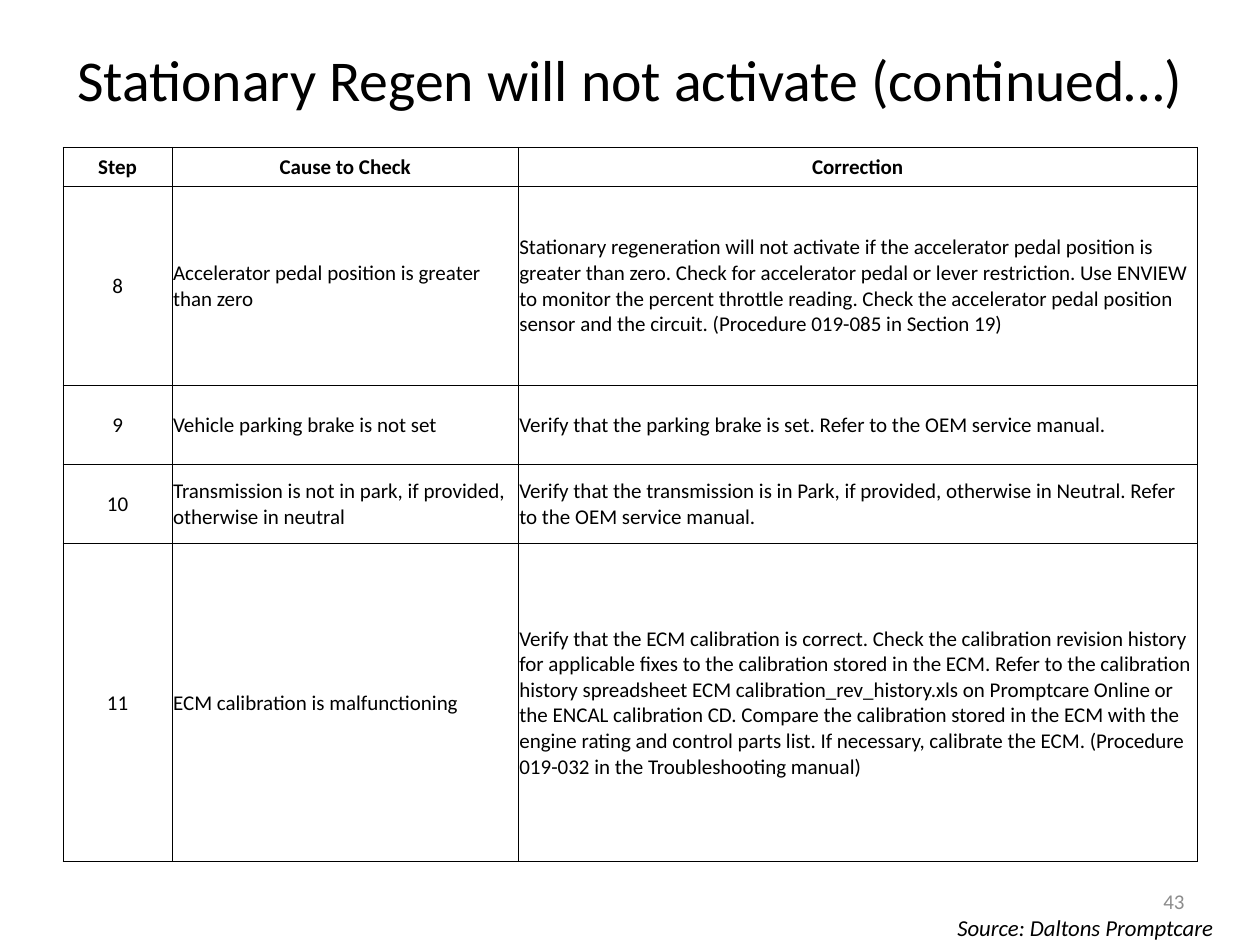
"""Build the slide with the table of causes and corrections for stationary regeneration."""
from lxml import etree
from pptx import Presentation
from pptx import util as u
from pptx.dml.color import RGBColor
from pptx.enum import text
from pptx.oxml import ns

BLACK = RGBColor(0x00, 0x00, 0x00)
GREY = RGBColor(0x8C, 0x8C, 0x8C)
LEFT, CENTER, RIGHT = text.PP_ALIGN.LEFT, text.PP_ALIGN.CENTER, text.PP_ALIGN.RIGHT
MIDDLE = text.MSO_ANCHOR.MIDDLE


def write(tf, words, size=12, color=BLACK, bold=False, italic=False, align=LEFT):
    tf.word_wrap = True
    p = tf.paragraphs[0]
    p.alignment = align
    r = p.add_run()
    r.text = words
    r.font.name = "Calibri"
    r.font.size = u.Pt(size)
    r.font.bold = bold
    r.font.italic = italic
    r.font.color.rgb = color


def add_borders(cell):
    tcPr = cell._tc.get_or_add_tcPr()
    for side in ("a:lnL", "a:lnR", "a:lnT", "a:lnB"):
        ln = etree.SubElement(tcPr, ns.qn(side), w=str(u.Pt(0.5)))
        fill = etree.SubElement(ln, ns.qn("a:solidFill"))
        etree.SubElement(fill, ns.qn("a:srgbClr"), val=str(BLACK))


ROWS = [
    ("Step", "Cause to Check", "Correction"),
    ("8", "Accelerator pedal position is greater than zero",
     "Stationary regeneration will not activate if the accelerator pedal position is "
     "greater than zero. Check for accelerator pedal or lever restriction. Use ENVIEW to "
     "monitor the percent throttle reading. Check the accelerator pedal position sensor "
     "and the circuit. (Procedure 019-085 in Section 19)"),
    ("9", "Vehicle parking brake is not set",
     "Verify that the parking brake is set. Refer to the OEM service manual."),
    ("10", "Transmission is not in park, if provided, otherwise in neutral",
     "Verify that the transmission is in Park, if provided, otherwise in Neutral. "
     "Refer to the OEM service manual."),
    ("11", "ECM calibration is malfunctioning",
     "Verify that the ECM calibration is correct. Check the calibration revision history "
     "for applicable fixes to the calibration stored in the ECM. Refer to the calibration "
     "history spreadsheet ECM calibration_rev_history.xls on Promptcare Online or the "
     "ENCAL calibration CD. Compare the calibration stored in the ECM with the engine "
     "rating and control parts list. If necessary, calibrate the ECM. (Procedure 019-032 "
     "in the Troubleshooting manual)"),
]
WIDTHS = [2.2, 6.98, 13.68]
HEIGHTS = [0.79, 4, 1.6, 1.6, 6.4]

prs = Presentation()
prs.slide_width, prs.slide_height = u.Cm(25.4), u.Cm(19.05)
s = prs.slides.add_slide(prs.slide_layouts[5])

title = s.shapes.title
title.left, title.top, title.width, title.height = u.Cm(1.27), u.Cm(0), u.Cm(22.86), u.Cm(3.18)
title.text_frame.vertical_anchor = MIDDLE
write(title.text_frame, "Stationary Regen will not activate (continued…)", size=33, align=CENTER)

sp = s.shapes.add_textbox(u.Cm(19.05), u.Cm(18.29), u.Cm(6.35), u.Cm(0.81))
write(sp.text_frame, "Source: Daltons Promptcare", size=13, italic=True)

table = s.shapes.add_table(len(ROWS), len(WIDTHS), u.Cm(1.27), u.Cm(2.97),
                           u.Cm(sum(WIDTHS)), u.Cm(sum(HEIGHTS))).table
table.first_row = table.horz_banding = False
for column, width in zip(table.columns, WIDTHS):
    column.width = u.Cm(width)
for i, (row, height) in enumerate(zip(ROWS, HEIGHTS)):
    table.rows[i].height = u.Cm(height)
    for j, words in enumerate(row):
        cell = table.cell(i, j)
        cell.vertical_anchor = MIDDLE
        cell.margin_left = cell.margin_right = cell.margin_top = u.Cm(0.02)
        cell.margin_bottom = u.Cm(0)
        add_borders(cell)
        cell.fill.background()
        write(cell.text_frame, words, bold=i == 0, align=CENTER if i == 0 or j == 0 else LEFT)

sp = s.shapes.add_textbox(u.Cm(18.2), u.Cm(17.66), u.Cm(5.93), u.Cm(1.01))
sp.text_frame.vertical_anchor = MIDDLE
write(sp.text_frame, "43", color=GREY, align=RIGHT)

prs.save("out.pptx")
